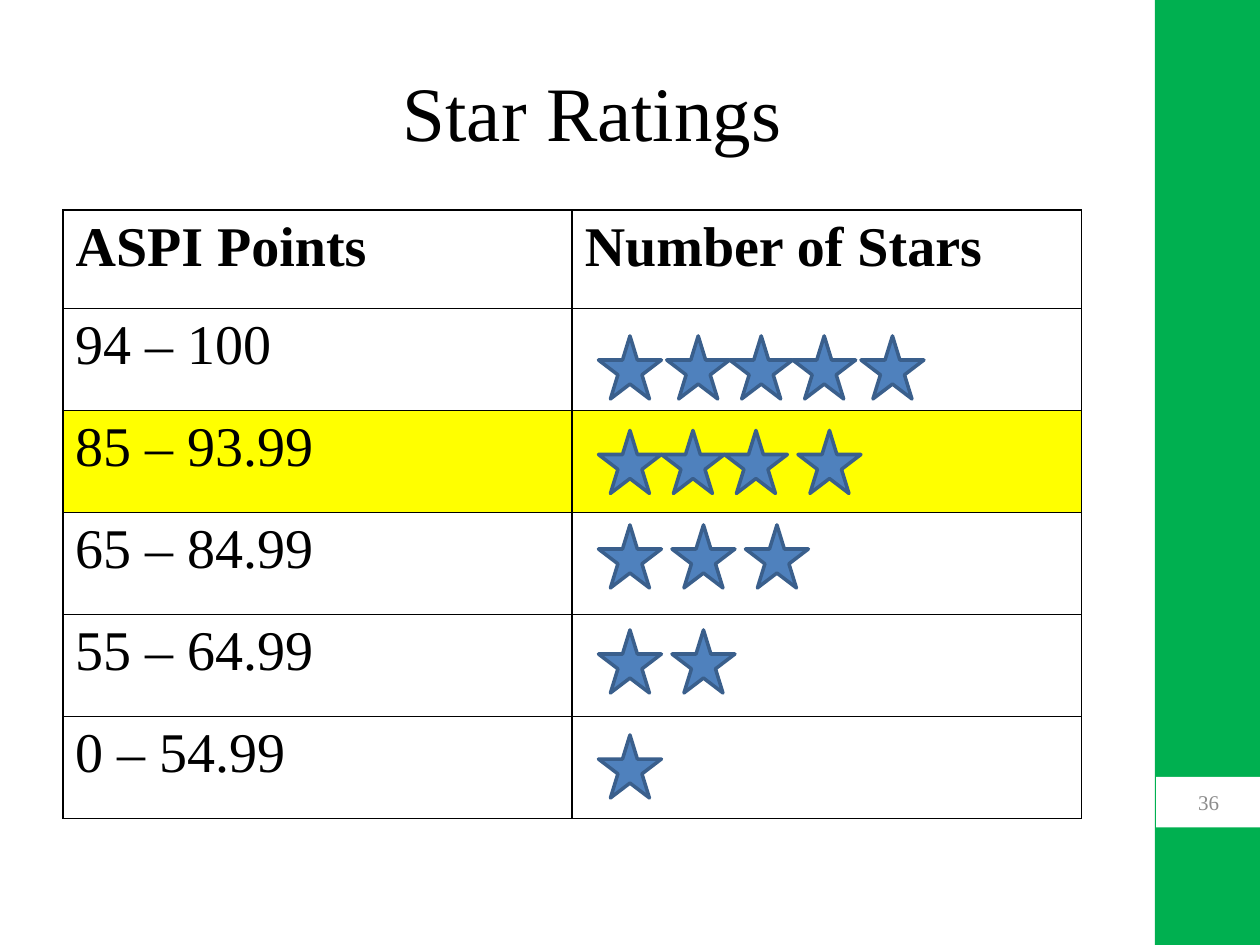
import pptx
import pptx.dml.color
import pptx.enum.shapes
import pptx.enum.text
import pptx.oxml
import pptx.oxml.ns
import pptx.util

UNIT = pptx.util.Inches(10) / 120
FONT = "Times New Roman"
STAR_SIZE = 6
RATINGS = [
    ("94 – 100", 32, [0, 6.5, 12.5, 18.5, 25]),
    ("85 – 93.99", 41, [0, 6, 12, 19]),
    ("65 – 84.99", 50, [0, 7, 14]),
    ("55 – 64.99", 60, [0, 7]),
    ("0 – 54.99", 70, [0]),
]
HIGHLIGHTED_ROW = 2


def color(value):
    """Turn a hex string into a colour."""
    return pptx.dml.color.RGBColor.from_string(value)


def place(box):
    """Turn a box in grid columns and rows into slide lengths."""
    return [pptx.util.Emu(round(length * UNIT)) for length in box]


def write(frame, text, size, value="000000", bold=False, alignment=None):
    """Write one styled paragraph into a text frame."""
    paragraph = frame.paragraphs[0]
    paragraph.text = text
    paragraph.alignment = alignment
    paragraph.font.name = FONT
    paragraph.font.size = pptx.util.Pt(size)
    paragraph.font.bold = bold
    paragraph.font.color.rgb = color(value)


def add_filled(shapes, kind, box, fill, line=None):
    """Add a flat preset shape with an optional outline."""
    shape = shapes.add_shape(kind, *place(box))
    shape.shadow.inherit = False
    shape.fill.solid()
    shape.fill.fore_color.rgb = color(fill)
    if line:
        shape.line.color.rgb = color(line)
        shape.line.width = pptx.util.Pt(2)
    else:
        shape.line.fill.background()
    return shape


def add_sidebar(slide, box, number):
    """Add the green side band and its page number panel."""
    rectangle = pptx.enum.shapes.MSO_SHAPE.RECTANGLE
    left, top, width, height = box
    add_filled(slide.shapes, rectangle, box, "00B050")
    panel = add_filled(slide.shapes, rectangle, (left + 0.1, top + 74, width, 4.8), "FFFFFF")
    panel.text_frame.vertical_anchor = pptx.enum.text.MSO_ANCHOR.MIDDLE
    write(panel.text_frame, number, 12, "8C8C8C", alignment=pptx.enum.text.PP_ALIGN.CENTER)


def add_title(slide, box, text):
    """Add the centred title."""
    frame = slide.shapes.add_textbox(*place(box)).text_frame
    frame.word_wrap = True
    frame.vertical_anchor = pptx.enum.text.MSO_ANCHOR.MIDDLE
    write(frame, text, 44, alignment=pptx.enum.text.PP_ALIGN.CENTER)


def add_borders(cell):
    """Draw thin black lines around a table cell."""
    properties = cell._tc.get_or_add_tcPr()
    for side in ("lnL", "lnR", "lnT", "lnB"):
        properties.append(pptx.oxml.parse_xml(
            f'<a:{side} {pptx.oxml.ns.nsdecls("a")} w="12700"><a:solidFill>'
            f'<a:srgbClr val="000000"/></a:solidFill></a:{side}>'))


def add_table(slide, box):
    """Add the table of point ranges with one highlighted row."""
    rows = [("ASPI Points", "Number of Stars")] + [(points, "") for points, _, _ in RATINGS]
    table = slide.shapes.add_table(len(rows), 2, *place(box)).table
    table.first_row = table.horz_banding = False
    for index, texts in enumerate(rows):
        table.rows[index].height = pptx.util.Inches(0.81 if index else 0.78)
        for cell, text in zip(table.rows[index].cells, texts):
            add_borders(cell)
            if index == HIGHLIGHTED_ROW:
                cell.fill.solid()
                cell.fill.fore_color.rgb = color("FFFF00")
            else:
                cell.fill.background()
            write(cell.text_frame, text, 32, bold=index == 0)


def add_stars(slide, left, top, offsets):
    """Add one rating as a row of stars, grouped when there are several."""
    shapes = slide.shapes.add_group_shape().shapes if len(offsets) > 1 else slide.shapes
    for offset in offsets:
        add_filled(shapes, pptx.enum.shapes.MSO_SHAPE.STAR_5_POINT,
                   (left + offset, top, STAR_SIZE, STAR_SIZE), "4F81BD", "3A5F8C")


def main():
    """Build and save the slide."""
    presentation = pptx.Presentation()
    presentation.slide_width = pptx.util.Inches(10)
    presentation.slide_height = pptx.util.Inches(7.5)
    slide = presentation.slides.add_slide(presentation.slide_layouts[6])
    add_sidebar(slide, (110, 0, 10, 90), "36")
    add_table(slide, (6, 20, 97, 58))
    add_title(slide, (4, 3, 104.8, 15), "Star Ratings")
    for _, top, offsets in RATINGS:
        add_stars(slide, 57, top, offsets)
    presentation.save("out.pptx")


if __name__ == "__main__":
    main()
